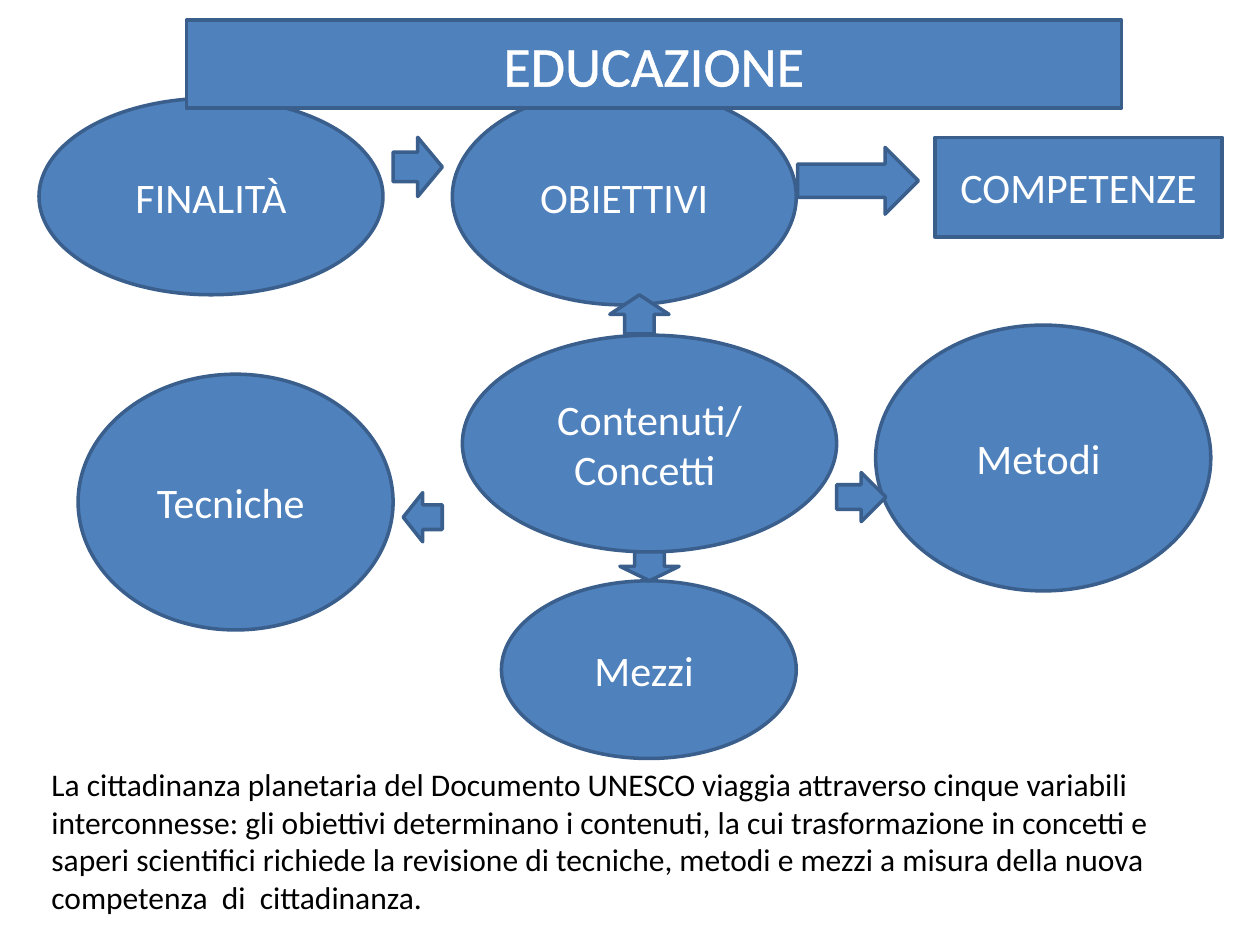
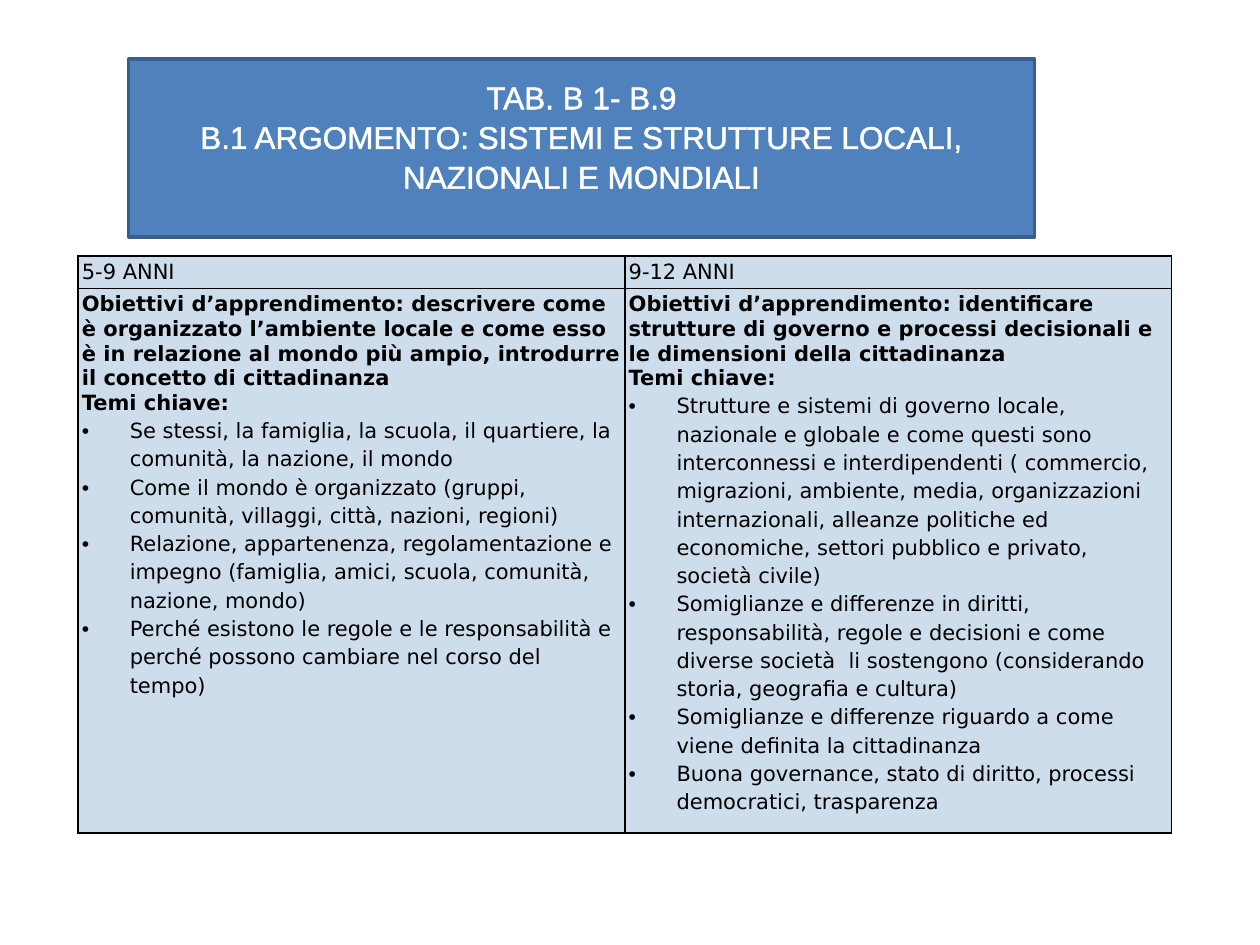
from lxml import etree
from pptx import Presentation
from pptx import util as u
from pptx.dml import color
from pptx.enum import shapes, text
from pptx.oxml import ns

COLORS = {"blue": "4F81BD", "edge": "3A5F8C", "pale": "CEDDEB",
          "white": "FFFFFF", "black": "000000"}
SHAPE = shapes.MSO_SHAPE
CENTER = text.PP_ALIGN.CENTER
LABEL = {"size": 24, "name": "Calibri", "color": "white"}
HEADING = {"size": 32, "name": "Calibri", "color": "white", "outlined": True}
TAB_HEADING = {"size": 18, "name": "Arial", "color": "white", "outlined": True}
CAPTION = {"size": 18, "name": "Calibri", "color": "black"}
BODY = {"size": 12, "name": "DejaVu Sans", "color": "black", "bold": False}

NODES = [
    (SHAPE.OVAL, 3.28, 0.54, 2.73, 1.72, "OBIETTIVI"),
    (SHAPE.OVAL, 0.31, 2.81, 2.5, 2.03, "Tecniche "),
    (SHAPE.OVAL, 6.64, 2.42, 2.66, 2.11, "Metodi "),
    (SHAPE.OVAL, 3.67, 4.45, 2.34, 1.41, "Mezzi "),
    (SHAPE.OVAL, 3.36, 2.5, 2.97, 1.72, "Contenuti/ Concetti "),
    (SHAPE.UP_ARROW, 4.53, 2.18, 0.47, 0.31, ""),
    (SHAPE.DOWN_ARROW, 4.61, 4.22, 0.47, 0.23, ""),
    (SHAPE.RIGHT_ARROW, 6.33, 3.59, 0.39, 0.39, ""),
    (SHAPE.LEFT_ARROW, 2.89, 3.75, 0.31, 0.39, ""),
    (SHAPE.RIGHT_ARROW, 6.02, 1.01, 0.96, 0.53, ""),
    (SHAPE.RECTANGLE, 7.11, 0.93, 2.28, 0.79, "COMPETENZE"),
    (SHAPE.OVAL, 0, 0.62, 2.73, 1.56, "FINALITÀ"),
    (SHAPE.RIGHT_ARROW, 2.81, 0.93, 0.39, 0.47, ""),
]

SUMMARY = ("La cittadinanza planetaria del Documento UNESCO viaggia attraverso cinque "
           "variabili interconnesse: gli obiettivi determinano i contenuti, la cui "
           "trasformazione in concetti e saperi scientifici richiede la revisione di "
           "tecniche, metodi e mezzi a misura della nuova competenza  di  cittadinanza.")

AGE_GROUPS = [
    ("5-9 ANNI",
     "Obiettivi d’apprendimento: descrivere come è organizzato l’ambiente locale e come "
     "esso è in relazione al mondo più ampio, introdurre il concetto di cittadinanza",
     ["Se stessi, la famiglia, la scuola, il quartiere, la comunità, la nazione, il mondo",
      "Come il mondo è organizzato (gruppi, comunità, villaggi, città, nazioni, regioni)",
      "Relazione, appartenenza, regolamentazione e impegno (famiglia, amici, scuola, "
      "comunità, nazione, mondo)",
      "Perché esistono le regole e le responsabilità e perché possono cambiare nel corso "
      "del tempo)"]),
    ("9-12 ANNI",
     "Obiettivi d’apprendimento: identificare strutture di governo e processi decisionali "
     "e le dimensioni della cittadinanza",
     ["Strutture e sistemi di governo locale, nazionale e globale e come questi sono "
      "interconnessi e interdipendenti ( commercio, migrazioni, ambiente, media, "
      "organizzazioni internazionali, alleanze politiche ed economiche, settori pubblico "
      "e privato, società civile)",
      "Somiglianze e differenze in diritti, responsabilità, regole e decisioni e come "
      "diverse società  li sostengono (considerando storia, geografia e cultura)",
      "Somiglianze e differenze riguardo a come viene definita la cittadinanza",
      "Buona governance, stato di diritto, processi democratici, trasparenza"]),
]


def rgb(name):
    return color.RGBColor.from_string(COLORS[name])


def inches(box):
    return [u.Inches(length) for length in box]


def add_line(parent, tag, color_name, points):
    line = etree.SubElement(parent, ns.qn(tag), w=str(u.Pt(points)))
    fill = etree.SubElement(line, ns.qn("a:solidFill"))
    etree.SubElement(fill, ns.qn("a:srgbClr"), val=COLORS[color_name])
    return line


def write(frame, lines, style, **para_format):
    for index, line in enumerate(lines):
        para = frame.paragraphs[0] if index == 0 else frame.add_paragraph()
        for key, value in para_format.items():
            setattr(para, key, value)
        span = para.add_run()
        span.text = line
        format_values = {"size": u.Pt(style["size"]), "name": style["name"],
                         "bold": style.get("bold", False)}
        for key, value in format_values.items():
            setattr(span.font, key, value)
        span.font.color.rgb = rgb(style["color"])
        if style.get("outlined"):
            properties = span.font._element
            properties.insert(0, add_line(properties, "a:ln", style["color"], 1.45))


def add_block(page, kind, box, lines=(), style=LABEL, **para_format):
    block = page.shapes.add_shape(kind, *inches(box))
    block.shadow.inherit = False
    block.fill.solid()
    block.fill.fore_color.rgb = rgb("blue")
    block.line.color.rgb = rgb("edge")
    block.line.width = u.Pt(2)
    block.text_frame.vertical_anchor = text.MSO_ANCHOR.MIDDLE
    write(block.text_frame, lines, style, alignment=CENTER, **para_format)
    return block


def concept_map(page, box):
    left, top = box
    for kind, x, y, width, height, label in NODES:
        add_block(page, kind, (left + x, top + y, width, height), [label] if label else [])


def summary(page, box):
    frame = page.shapes.add_textbox(*inches(box)).text_frame
    frame.word_wrap = True
    write(frame, [SUMMARY], CAPTION)


def add_bullet(para):
    properties = para._p.get_or_add_pPr()
    properties.set("marL", str(u.Inches(0.38)))
    properties.set("indent", str(u.Inches(-0.38)))
    etree.SubElement(properties, ns.qn("a:buFont"), typeface="Arial")
    etree.SubElement(properties, ns.qn("a:buChar"), char="•")
    para.line_spacing = 1.15


def format_cell(cell):
    for side in ("left", "right", "top", "bottom"):
        setattr(cell, f"margin_{side}", u.Inches(0.03))
    properties = cell._tc.get_or_add_tcPr()
    for tag in ("a:lnL", "a:lnR", "a:lnT", "a:lnB"):
        add_line(properties, tag, "black", 1)
    cell.fill.solid()
    cell.fill.fore_color.rgb = rgb("pale")


def age_table(page, box):
    grid = page.shapes.add_table(2, len(AGE_GROUPS), *inches(box)).table
    grid.first_row = grid.horz_banding = False
    header_height = 0.26
    grid.rows[0].height = u.Inches(header_height)
    grid.rows[1].height = u.Inches(box[3] - header_height)
    for column, (ages, goal, themes) in enumerate(AGE_GROUPS):
        header, content = grid.cell(0, column), grid.cell(1, column)
        for cell in (header, content):
            format_cell(cell)
        write(header.text_frame, [ages], BODY)
        write(content.text_frame, [goal, "Temi chiave:"], {**BODY, "bold": True})
        for theme in themes:
            para = content.text_frame.add_paragraph()
            add_bullet(para)
            span = para.add_run()
            span.text = theme
            span.font.size = u.Pt(BODY["size"])
            span.font.name = BODY["name"]
            span.font.color.rgb = rgb(BODY["color"])


def education_slide(page):
    concept_map(page, (0.31, 0.16))
    summary(page, (0.31, 6.02, 9.3, 1.31))
    add_block(page, SHAPE.RECTANGLE, (1.48, 0.16, 7.42, 0.7), ["EDUCAZIONE"], HEADING)


def topic_slide(page):
    heading = add_block(
        page, SHAPE.RECTANGLE, (1.02, 0.47, 7.19, 1.41),
        ["TAB. B 1- B.9", "B.1 ARGOMENTO: SISTEMI E STRUTTURE LOCALI, NAZIONALI E MONDIALI"],
        TAB_HEADING, line_spacing=1.05)
    heading.text_frame.margin_bottom = u.Inches(0.25)
    age_table(page, (0.62, 2.03, 8.68, 4.58))


def main():
    deck = Presentation()
    deck.slide_width, deck.slide_height = inches((10, 7.5))
    for build in (education_slide, topic_slide):
        build(deck.slides.add_slide(deck.slide_layouts[6]))
    deck.save("out.pptx")


if __name__ == "__main__":
    main()
